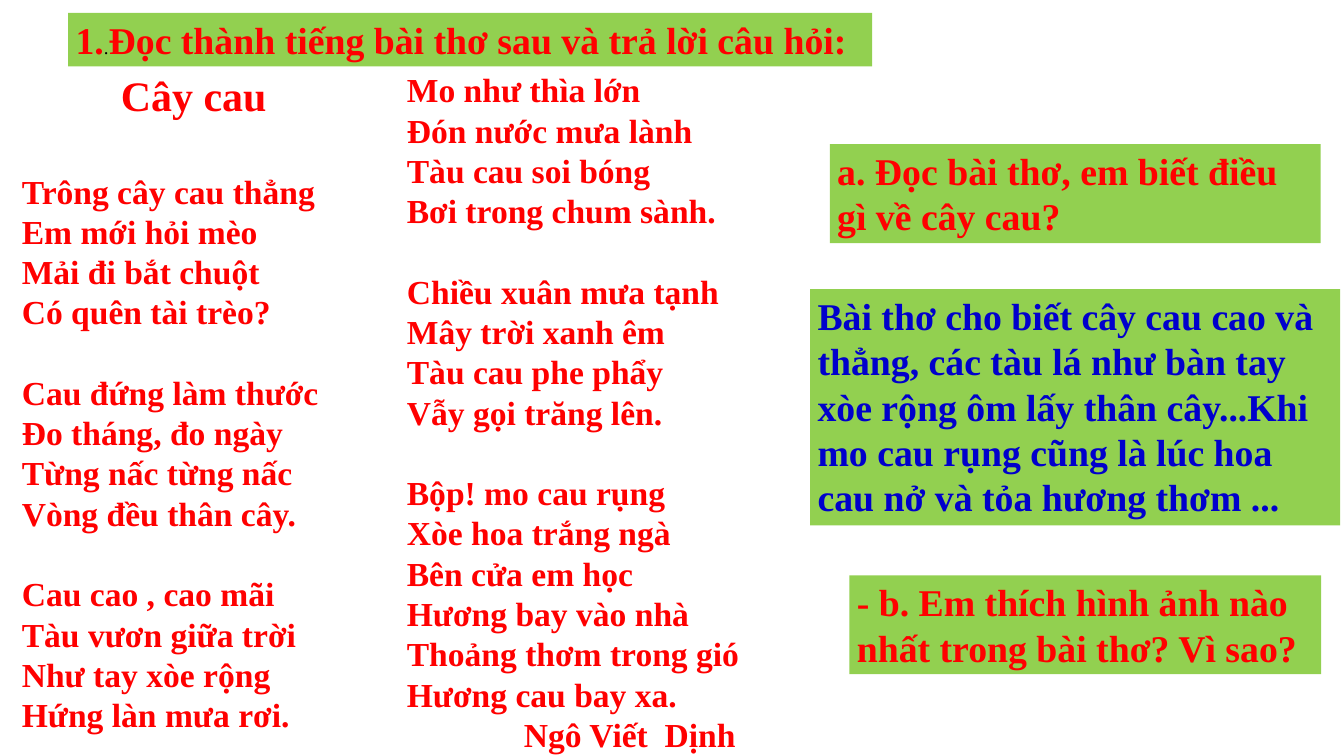
"""Build a reading slide: a poem in two columns beside its questions and answer."""
from pptx import Presentation
from pptx.dml.color import RGBColor
from pptx.enum.text import MSO_ANCHOR as ANCHOR, PP_ALIGN as ALIGN
from pptx.util import Inches, Pt

GREEN = RGBColor(0x92, 0xD0, 0x50)
RED = RGBColor(0xFF, 0x00, 0x00)
BLUE = RGBColor(0x00, 0x00, 0xCC)
BLACK = RGBColor(0x00, 0x00, 0x00)
FONT = "Times New Roman"

prs = Presentation()
prs.slide_width, prs.slide_height = Inches(17.8), Inches(10)
s = prs.slides.add_slide(prs.slide_layouts[5])


def place(sp, x, y, w, h):
    """Place a shape by percentages of the slide and return its text frame."""
    sp.left, sp.width = (int(prs.slide_width * v / 100) for v in (x, w))
    sp.top, sp.height = (int(prs.slide_height * v / 100) for v in (y, h))
    tf = sp.text_frame
    tf.word_wrap = True
    tf.vertical_anchor = ANCHOR.TOP
    return tf


def add_run(p, text, size, color=RED, bold=True):
    """Append a formatted run to a paragraph."""
    r = p.add_run()
    r.text = text
    r.font.name, r.font.size, r.font.bold = FONT, Pt(size), bold
    r.font.color.rgb = color


title = s.shapes.title
title.fill.solid()
title.fill.fore_color.rgb = GREEN
p = place(title, 5.06, 1.7, 59.83, 7.1).paragraphs[0]
p.alignment = ALIGN.LEFT
add_run(p, "1.", 36)
add_run(p, ".", 18, BLACK, False)
add_run(p, "Đọc thành tiếng bài thơ sau và trả lời câu hỏi:", 36)

panels = [
    ((61.74, 19.1, 36.52, 13.1), RED, "a. Đọc bài thơ, em biết điều gì về cây cau?"),
    ((60.28, 38.3, 39.44, 31.3), BLUE,
     "Bài thơ cho biết cây cau cao và thẳng, các tàu lá như bàn tay xòe rộng "
     "ôm lấy thân cây...Khi mo cau rụng cũng là lúc hoa cau nở và tỏa hương thơm ..."),
    ((63.2, 76.2, 35.11, 13.1), RED,
     "- b. Em thích hình ảnh nào nhất trong bài thơ? Vì sao?"),
]
for box, color, text in panels:
    sp = s.shapes.add_textbox(0, 0, 0, 0)
    sp.fill.solid()
    sp.fill.fore_color.rgb = GREEN
    add_run(place(sp, *box).paragraphs[0], text, 36, color)

left_stanzas = [
    ["Trông cây cau thẳng", "Em mới hỏi mèo", "Mải đi bắt chuột", "Có quên tài trèo?"],
    ["Cau đứng làm thước", "Đo tháng, đo ngày", "Từng nấc từng nấc", "Vòng đều thân cây."],
    ["Cau cao , cao mãi", "Tàu vươn giữa trời", "Như tay xòe rộng", "Hứng làn mưa rơi."],
]
right_stanzas = [
    ["Mo như thìa lớn", "Đón nước mưa lành", "Tàu cau soi bóng", "Bơi trong chum sành."],
    ["Chiều xuân mưa tạnh", "Mây trời xanh êm", "Tàu cau phe phẩy", "Vẫy gọi trăng lên."],
    ["Bộp! mo cau rụng", "Xòe hoa trắng ngà", "Bên cửa em học", "Hương bay vào nhà",
     "Thoảng thơm trong gió", "Hương cau bay xa."],
]
right = place(s.shapes.add_textbox(0, 0, 0, 0), 29.72, 8.7, 31.63, 104.7)
left = place(s.shapes.add_textbox(0, 0, 0, 0), 1.07, 8.7, 26.69, 102)

p = left.paragraphs[0]
p.alignment = ALIGN.CENTER
p.space_after = Pt(10)
add_run(p, "Cây cau", 40)

for tf, stanzas in ((left, left_stanzas), (right, right_stanzas)):
    for stanza in stanzas:
        for i, line in enumerate(stanza):
            first = tf is right and stanza is stanzas[0] and i == 0
            p = tf.paragraphs[0] if first else tf.add_paragraph()
            if i == 0 and not first:
                p.space_before = Pt(38.4)
            add_run(p, line, 32)

p = right.add_paragraph()
p._p.get_or_add_pPr().set("marL", str(Inches(1.55)))
add_run(p, "Ngô Viết  Dịnh", 32)

prs.save("out.pptx")
